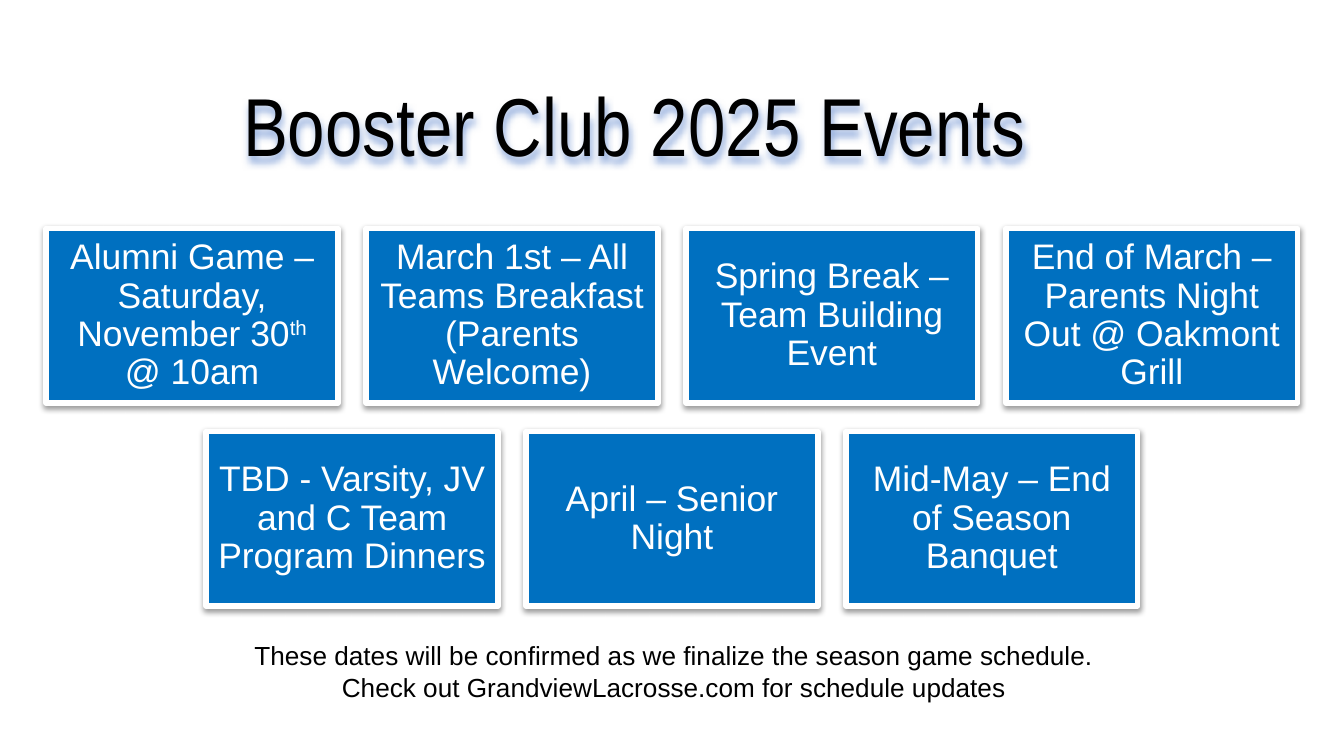
from lxml import etree
from pptx import Presentation
from pptx.dml.color import RGBColor
from pptx.enum.shapes import MSO_SHAPE
from pptx.enum.text import MSO_ANCHOR, PP_ALIGN
from pptx.oxml.ns import qn
from pptx.util import Inches, Pt

RECTANGLE = MSO_SHAPE.RECTANGLE
TOP, MIDDLE = MSO_ANCHOR.TOP, MSO_ANCHOR.MIDDLE
LEFT, CENTER = PP_ALIGN.LEFT, PP_ALIGN.CENTER
COLORS = {"card": "0070C0", "white": "FFFFFF", "black": "000000", "title_shadow": "4472C4"}


def add_shadow(shape, color, alpha, blur, distance):
    shape.shadow.inherit = False
    effects = shape._element.spPr.find(qn("a:effectLst"))
    shadow = etree.SubElement(effects, qn("a:outerShdw"), blurRad=str(Pt(blur)),
                              dist=str(Pt(distance)), dir="5400000", rotWithShape="0")
    tint = etree.SubElement(shadow, qn("a:srgbClr"), val=COLORS[color])
    etree.SubElement(tint, qn("a:alpha"), val=str(alpha * 1000))


def write(frame, text, size, color, font="Arial", align=CENTER, anchor=MIDDLE,
          inset=(0.1, 0.1), spacing=1.0):
    frame.word_wrap = True
    frame.vertical_anchor = anchor
    frame.margin_left = frame.margin_right = Inches(inset[0])
    frame.margin_top = frame.margin_bottom = Inches(inset[1])
    for number, line in enumerate(text.split("\n")):
        paragraph = frame.add_paragraph() if number else frame.paragraphs[0]
        paragraph.alignment = align
        paragraph.line_spacing = spacing
        for part, words in enumerate(line.split("^")):
            run = paragraph.add_run()
            run.text = words
            run.font.size = Pt(size)
            run.font.name = font
            run.font.color.rgb = RGBColor.from_string(COLORS[color])
            if part % 2:
                run.font._element.set("baseline", "30000")


deck = Presentation()
deck.slide_width = Inches(10)
deck.slide_height = deck.slide_width * 9 // 16
slide = deck.slides.add_slide(deck.slide_layouts[6])

event_rows = [
    ["Alumni Game – Saturday, November 30^th^ @ 10am",
     "March 1st – All Teams Breakfast (Parents Welcome)",
     "Spring Break – Team Building Event",
     "End of March – Parents Night Out @ Oakmont Grill"],
    ["TBD - Varsity, JV and C Team Program Dinners",
     "April – Senior Night",
     "Mid-May – End of Season Banquet"],
]
card_width, card_height, gap = 2.17, 1.3, 0.21
column_step, row_step = card_width + gap, card_height + gap

for row, events in enumerate(event_rows):
    row_left = (10 - len(events) * column_step + gap) / 2
    for column, event in enumerate(events):
        card = slide.shapes.add_shape(
            RECTANGLE, Inches(row_left + column * column_step),
            Inches(1.7 + row * row_step), Inches(card_width), Inches(card_height))
        card.fill.solid()
        card.fill.fore_color.rgb = RGBColor.from_string(COLORS["card"])
        card.line.color.rgb = RGBColor.from_string(COLORS["white"])
        card.line.width = Pt(3)
        add_shadow(card, "black", alpha=38, blur=3.1, distance=1.6)
        write(card.text_frame, event, size=19, color="white", inset=(0.08, 0.08), spacing=0.9)

title = slide.shapes.add_textbox(Inches(1.71), Inches(0.34), Inches(7.39), Inches(1.16))
add_shadow(title, "title_shadow", alpha=60, blur=4, distance=3)
write(title.text_frame, "Booster Club 2025 Events", size=44, color="black",
      font="Arial Narrow", align=LEFT)

schedule_note = slide.shapes.add_textbox(Inches(1.53), Inches(4.71), Inches(6.97), Inches(0.57))
write(schedule_note.text_frame,
      "These dates will be confirmed as we finalize the season game schedule.\n"
      "Check out GrandviewLacrosse.com for schedule updates",
      size=14, color="black", anchor=TOP, inset=(0.1, 0.05))

deck.save("out.pptx")
